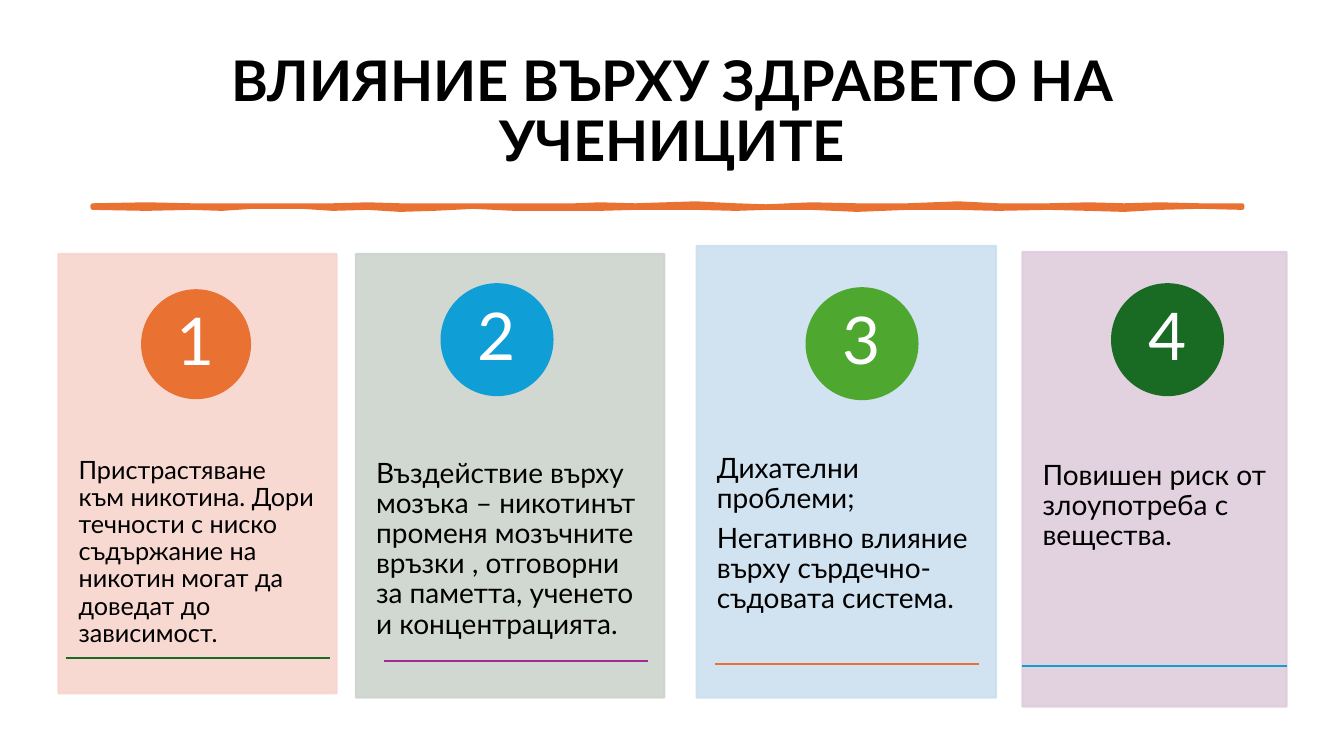
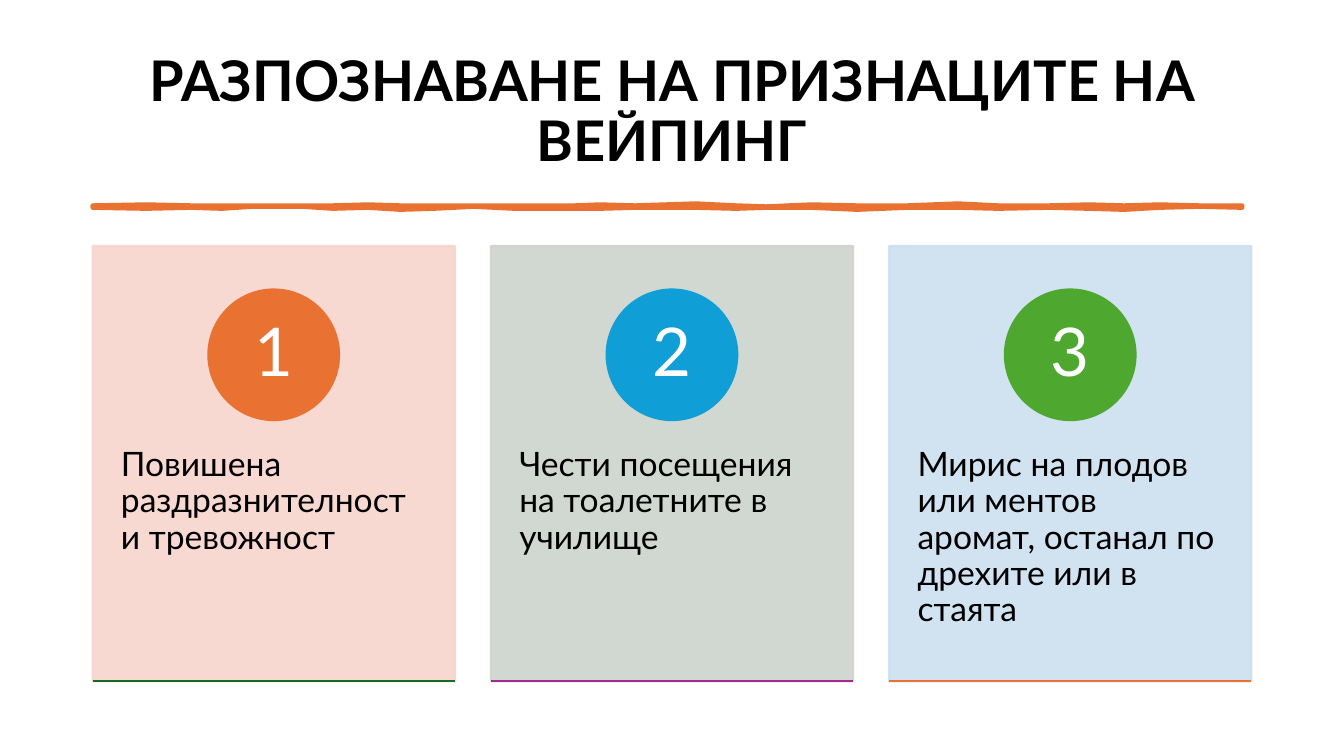
"""Build two slides of numbered cards about vaping and pupils' health."""
import dataclasses

import lxml.etree
import pptx
import pptx.dml.color
import pptx.enum.shapes
import pptx.enum.text
import pptx.oxml.ns
import pptx.util

Inches = pptx.util.Inches
SHAPES = pptx.enum.shapes.MSO_SHAPE
ALIGN = pptx.enum.text.PP_ALIGN
ANCHOR = pptx.enum.text.MSO_ANCHOR


@dataclasses.dataclass(frozen=True)
class Theme:
    """Colours, font and type sizes shared by the slides."""
    font: str = "Lato"
    ink: str = "000000"
    paper: str = "FFFFFF"
    stroke: str = "E97132"
    card_fills: tuple = ("F7D5CE", "CCD4CD", "CCDFEF", "DFCDDC")
    badge_fills: tuple = ("E97132", "0F9ED5", "4EA72E", "196B24")
    rule_colors: tuple = ("196B24", "A02B93", "E97132", "0F9ED5")
    title_size: int = 40
    line_width: float = 1.5
    stroke_width: float = 3.25


@dataclasses.dataclass(frozen=True)
class Card:
    """Place and wording of one card, its badge and its rule, in inches."""
    left: float
    top: float
    width: float
    height: float
    badge: tuple
    rule: tuple
    lines: tuple
    size: int


THEME = Theme()

BRUSH_PROFILE = (
    (0.92, 2.04, 2.06), (1.45, 2.03, 2.07), (1.9, 2.04, 2.06),
    (2.2, 2.04, 2.07), (2.5, 2.04, 2.05), (3.0, 2.04, 2.05),
    (3.3, 2.04, 2.07), (3.65, 2.03, 2.06), (3.97, 2.04, 2.08),
    (4.3, 2.04, 2.07), (4.7, 2.04, 2.05), (5.1, 2.04, 2.07),
    (5.7, 2.04, 2.07), (5.95, 2.03, 2.07), (6.3, 2.04, 2.06),
    (6.9, 2.02, 2.06), (7.3, 2.04, 2.07), (7.6, 2.05, 2.06),
    (8.05, 2.03, 2.06), (8.5, 2.04, 2.08), (9.0, 2.04, 2.06),
    (9.5, 2.02, 2.06), (9.9, 2.04, 2.07), (10.4, 2.04, 2.06),
    (10.8, 2.03, 2.07), (11.15, 2.04, 2.08), (11.5, 2.03, 2.06),
    (11.9, 2.04, 2.05), (12.32, 2.04, 2.06),
)

HEALTH_CARDS = (
    Card(0.58, 2.52, 2.76, 4.36, (1.41, 2.88, 1.07), (0.65, 6.53, 2.62),
         ("Пристрастяване към никотина. Дори течности с ниско съдържание "
          "на никотин могат да доведат до зависимост.",), 18),
    Card(3.53, 2.52, 3.06, 4.4, (4.38, 2.82, 1.1), (3.81, 6.56, 2.62),
         ("Въздействие върху мозъка – никотинът променя мозъчните връзки , "
          "отговорни за паметта, ученето и концентрацията.",), 20),
    Card(6.91, 2.44, 2.97, 4.48, (8, 2.86, 1.1), (7.09, 6.59, 2.62),
         ("Дихателни проблеми;",
          "Негативно влияние върху сърдечно-съдовата система."), 20),
    Card(10.14, 2.5, 2.62, 4.51, (11.03, 2.82, 1.1), (10.14, 6.61, 2.62),
         ("Повишен риск от злоупотреба с вещества.",), 20),
)

SIGNS = (
    "Повишена раздразнителност и тревожност",
    "Чести посещения на тоалетните в училище",
    "Мирис на плодов или ментов аромат, останал по дрехите или в стаята",
)


def rgb(color):
    """Turn a hexadecimal string into a colour."""
    return pptx.dml.color.RGBColor.from_string(color)


def write_text(frame, lines, *, size, color=THEME.ink, bold=False,
               align=ALIGN.LEFT, anchor=ANCHOR.TOP, insets=(0.1, 0.05)):
    """Fill a text frame with formatted paragraphs."""
    frame.word_wrap = True
    frame.auto_size = pptx.enum.text.MSO_AUTO_SIZE.NONE
    frame.vertical_anchor = anchor
    frame.margin_left = frame.margin_right = Inches(insets[0])
    frame.margin_top = frame.margin_bottom = Inches(insets[1])
    for index, line in enumerate(lines):
        para = frame.add_paragraph() if index else frame.paragraphs[0]
        para.alignment = align
        para.line_spacing = 0.9
        para.space_before = pptx.util.Pt(0)
        para.space_after = pptx.util.Pt(0.35 * size)
        span = para.add_run()
        span.text = line
        span.font.name = THEME.font
        span.font.size = pptx.util.Pt(size)
        span.font.bold = bold
        span.font.color.rgb = rgb(color)


def paint(shape, color, *, line_width=THEME.line_width, opacity=100):
    """Give a shape one colour for fill and line, without a shadow."""
    shape.shadow.inherit = False
    shape.fill.solid()
    shape.fill.fore_color.rgb = rgb(color)
    shape.line.color.rgb = rgb(color)
    shape.line.width = pptx.util.Pt(line_width)
    if opacity < 100:
        for tint in shape.element.spPr.iter(pptx.oxml.ns.qn("a:srgbClr")):
            alpha = lxml.etree.SubElement(tint, pptx.oxml.ns.qn("a:alpha"))
            alpha.set("val", str(opacity * 1000))


def add_rule(page, left, top, width, color):
    """Draw a thin horizontal line."""
    rule = page.shapes.add_connector(
        pptx.enum.shapes.MSO_CONNECTOR.STRAIGHT,
        Inches(left), Inches(top), Inches(left + width), Inches(top))
    rule.line.color.rgb = rgb(color)
    rule.line.width = pptx.util.Pt(THEME.line_width)
    lxml.etree.SubElement(rule.element.spPr, pptx.oxml.ns.qn("a:effectLst"))


def add_brush_stroke(page):
    """Draw the uneven brush stroke under the title."""
    upper = [(Inches(x), Inches(top)) for x, top, _ in BRUSH_PROFILE]
    lower = [(Inches(x), Inches(bottom)) for x, _, bottom in BRUSH_PROFILE]
    outline = page.shapes.build_freeform(*upper[0])
    outline.add_line_segments(upper[1:] + lower[::-1], close=True)
    paint(outline.convert_to_shape(), THEME.stroke,
          line_width=THEME.stroke_width)


def add_card(page, index, card, *, badge_size, side_inset):
    """Draw a card with its text, numbered badge and rule."""
    panel = page.shapes.add_shape(
        SHAPES.RECTANGLE, Inches(card.left), Inches(card.top),
        Inches(card.width), Inches(card.height))
    paint(panel, THEME.card_fills[index], opacity=90)

    box = page.shapes.add_textbox(
        Inches(card.left), Inches(card.top + 0.38 * card.height),
        Inches(card.width), Inches(0.6 * card.height))
    write_text(box.text_frame, card.lines, size=card.size,
               insets=(side_inset, 0.36))

    left, top, diameter = card.badge
    badge = page.shapes.add_shape(
        SHAPES.OVAL, Inches(left), Inches(top),
        Inches(diameter), Inches(diameter))
    paint(badge, THEME.badge_fills[index])
    write_text(badge.text_frame, [str(index + 1)], size=badge_size,
               color=THEME.paper, align=ALIGN.CENTER, anchor=ANCHOR.MIDDLE,
               insets=(0.09, 0.01))

    add_rule(page, *card.rule, THEME.rule_colors[index])


def sign_cards():
    """Lay out equal cards with centred badges and rules at the bottom."""
    top, width, height, gap = 2.44, 3.59, 4.32, 0.36
    diameter = 0.3 * height
    cards = []
    for index, sign in enumerate(SIGNS):
        left = 0.92 + index * (width + gap)
        badge = (left + (width - diameter) / 2, top + 0.1 * height, diameter)
        cards.append(Card(left, top, width, height, badge,
                          (left, top + height, width), (sign,), 24))
    return cards


def add_page(deck, title, cards, *, title_left, badge_size, side_inset):
    """Add a slide with a title, the brush stroke and a row of cards."""
    page = deck.slides.add_slide(deck.slide_layouts.get_by_name("Title Only"))
    heading = page.shapes.title
    heading.left, heading.top = Inches(title_left), Inches(0.4)
    heading.width = deck.slide_width - 2 * heading.left
    heading.height = Inches(1.45)
    write_text(heading.text_frame, [title], size=THEME.title_size, bold=True,
               align=ALIGN.CENTER, anchor=ANCHOR.MIDDLE)
    heading.text_frame.paragraphs[0].space_after = pptx.util.Pt(0)
    add_brush_stroke(page)
    for index, card in enumerate(cards):
        add_card(page, index, card, badge_size=badge_size,
                 side_inset=side_inset)


def main():
    """Build and save the deck."""
    deck = pptx.Presentation()
    deck.slide_width, deck.slide_height = Inches(13.33), Inches(7.5)
    add_page(deck, "ВЛИЯНИЕ ВЪРХУ ЗДРАВЕТО НА УЧЕНИЦИТЕ", HEALTH_CARDS,
             title_left=0.92, badge_size=47, side_inset=0.2)
    add_page(deck, "РАЗПОЗНАВАНЕ НА ПРИЗНАЦИТЕ НА ВЕЙПИНГ", sign_cards(),
             title_left=0.62, badge_size=48, side_inset=0.28)
    deck.save("out.pptx")


if __name__ == "__main__":
    main()
